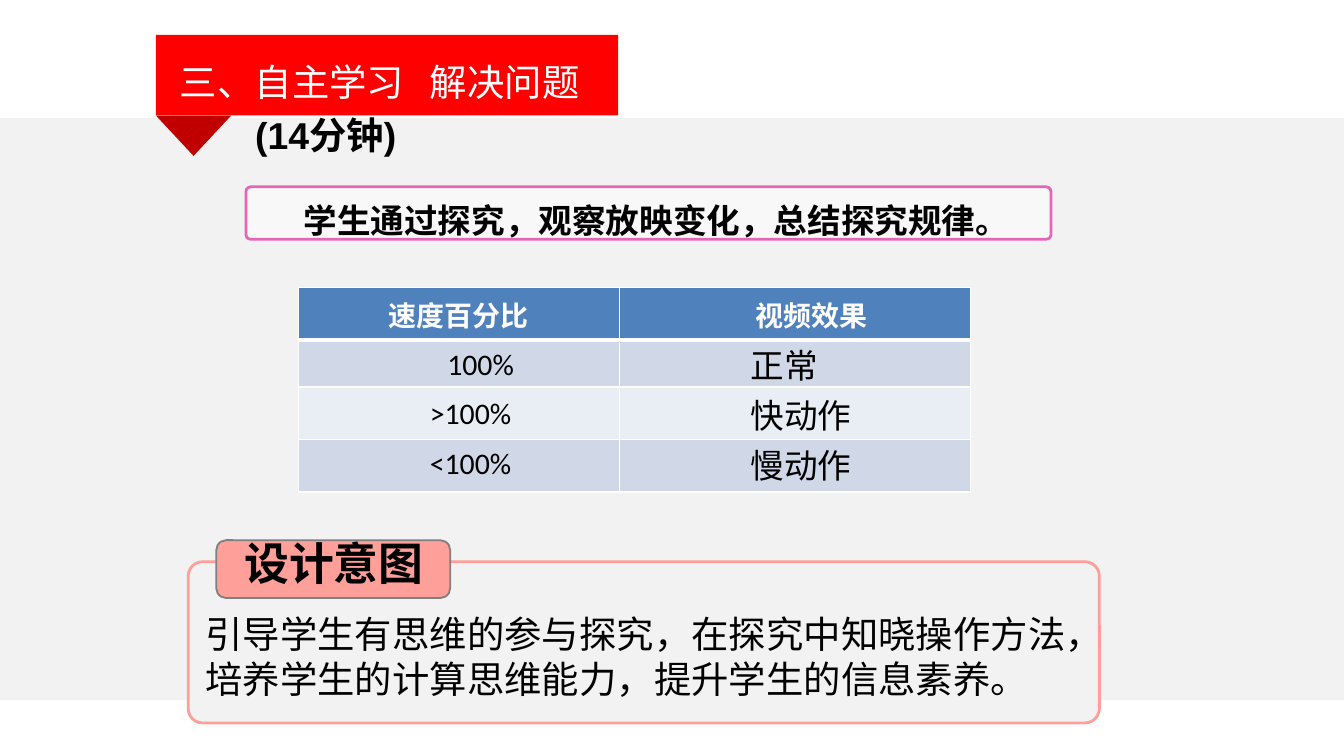
from lxml import etree
from pptx import Presentation
from pptx.dml.color import RGBColor
from pptx.enum.shapes import MSO_SHAPE
from pptx.enum.text import MSO_AUTO_SIZE, PP_ALIGN
from pptx.oxml.ns import qn
from pptx.util import Inches, Pt

RECT = MSO_SHAPE.RECTANGLE
ROUND = MSO_SHAPE.ROUNDED_RECTANGLE
WEDGE = MSO_SHAPE.ISOSCELES_TRIANGLE
GROW = MSO_AUTO_SIZE.SHAPE_TO_FIT_TEXT
LEFT = PP_ALIGN.LEFT
MID = PP_ALIGN.CENTER

HAN = "Noto Sans CJK SC"
COLS, ROWS = 100, 56.25
CELL = 0.1

HUE = {
    "white": "FFFFFF", "black": "000000", "band": "F2F2F2",
    "red": "FF0000", "dark": "C00000", "pale": "F8F8F8",
    "pink": "E466B7", "coral": "FF9F99", "gray": "808080",
    "head": "4F81BD", "odd": "D0D8E8", "even": "E9EDF4",
}


def grid(*units):
    return [Inches(unit * CELL) for unit in units]


def tint(name):
    return RGBColor.from_string(HUE[name])


def shape(pen, kind, at, fill, line=None, width=1.5, bend=None):
    item = pen.add_shape(kind, *grid(*at))
    item.shadow.inherit = False
    item.fill.solid()
    item.fill.fore_color.rgb = tint(fill)
    if line:
        item.line.color.rgb = tint(line)
        item.line.width = Pt(width)
    else:
        item.line.fill.background()
    if bend is not None:
        item.adjustments[0] = bend
    return item


def write(para, words, size, font=HAN, hue="black", bold=False):
    run = para.add_run()
    run.text = words
    run.font.size = Pt(size)
    run.font.name = font
    run.font.bold = bold
    run.font.color.rgb = tint(hue)
    east = etree.SubElement(run.font._element, qn("a:ea"))
    east.set("typeface", HAN)


def label(pen, at, words, size, align=LEFT, wrap=True, **style):
    frame = pen.add_textbox(*grid(*at)).text_frame
    frame.word_wrap = wrap
    frame.auto_size = GROW
    para = frame.paragraphs[0]
    para.alignment = align
    write(para, words, size, **style)
    return para


def stop(para, at):
    tabs = etree.SubElement(para._p.get_or_add_pPr(), qn("a:tabLst"))
    etree.SubElement(tabs, qn("a:tab"), pos=str(grid(at)[0]), algn="l")


def edge(cell, base):
    props = cell._tc.get_or_add_tcPr()
    sides = {"lnL": 1, "lnR": 1, "lnT": 1, "lnB": base}
    for spot, (side, width) in enumerate(sides.items()):
        line = etree.Element(qn("a:" + side), w=str(Pt(width)))
        fill = etree.SubElement(line, qn("a:solidFill"))
        etree.SubElement(fill, qn("a:srgbClr"), val=HUE["white"])
        props.insert(spot, line)


def table(pen, at, wide, high, heads):
    area = pen.add_table(len(high), len(wide), *grid(*at, sum(wide), sum(high)))
    sheet = area.table
    for col, width in zip(sheet.columns, grid(*wide)):
        col.width = width
    for num, (row, height) in enumerate(zip(sheet.rows, grid(*high))):
        row.height = height
        for cell in row.cells:
            cell.fill.solid()
            name = "odd" if num % 2 else "even"
            cell.fill.fore_color.rgb = tint(name if num else "head")
            cell.margin_top = cell.margin_bottom = 0
            edge(cell, 1 if num else 3)
    for cell, (words, inset) in zip(sheet.rows[0].cells, heads):
        cell.margin_left, cell.margin_top, cell.margin_bottom = grid(inset, 0.5, 0.3)
        para = cell.text_frame.paragraphs[0]
        para.alignment = MID
        write(para, words, 15, font="Calibri", hue="white", bold=True)


def banner(pen):
    shape(pen, RECT, (11.6, 2.6, 34.4, 6), "red")
    shape(pen, WEDGE, (11.6, 8.6, 5.6, 3), "dark").rotation = 180
    title = label(pen, (12.4, 3.9, 32.5, 4.4), "三、自主学习\t解决问题", 20, hue="white")
    stop(title, 18.6)


def task(pen):
    shape(pen, ROUND, (18.3, 13.9, 59.9, 3.9), "pale", "pink", bend=0.09)
    para = label(pen, (21.6, 14.1, 59.6, 4.3),
                 "学生通过探究，观察放映变化，总结探究规律。", 18, bold=True)
    para.line_spacing = 1.1


def intent(pen):
    shape(pen, ROUND, (14, 41.8, 67.8, 12), "band", "coral", bend=0.09)
    shape(pen, ROUND, (16.1, 40.2, 17.4, 4.3), "coral", "gray", 1, 0.17)
    label(pen, (15.3, 39.4, 19.1, 5), "设计意图", 24, MID, bold=True)
    label(pen, (14.3, 45, 69.8, 7.7),
          "引导学生有思维的参与探究，在探究中知晓操作方法，"
          "培养学生的计算思维能力，提升学生的信息素养。", 20, font="Arial")


def speeds(pen):
    table(pen, (22.2, 21.4), (23.9, 26.1), (3.9, 3.5, 3.9, 3.9),
          (("速度百分比", 1), ("视频效果", 3.4)))
    rows = (
        (25.2, 32.3, "100%", 7.1, "正常"),
        (28.9, 31, ">100%", 9.6, "快动作"),
        (32.6, 31, "<100%", 9.6, "慢动作"),
    )
    for top, left, rate, width, effect in rows:
        label(pen, (left, top, 8.2, 3.7), rate, 16, LEFT, False, font="Calibri")
        label(pen, (54.8, top, width, 4), effect, 18, MID, False, font="Calibri")


def main():
    deck = Presentation()
    deck.slide_width, deck.slide_height = grid(COLS, ROWS)
    pen = deck.slides.add_slide(deck.slide_layouts[6]).shapes
    shape(pen, RECT, (0, 8.8, COLS, 43.3), "band")
    for part in (banner, task, intent):
        part(pen.add_group_shape().shapes)
    speeds(pen)
    time = label(pen, (18, 9.4, 46, 2.8), "(14分钟)", 20, font="Arial", bold=True)
    time.line_spacing = Pt(13)
    deck.save("out.pptx")


if __name__ == "__main__":
    main()
